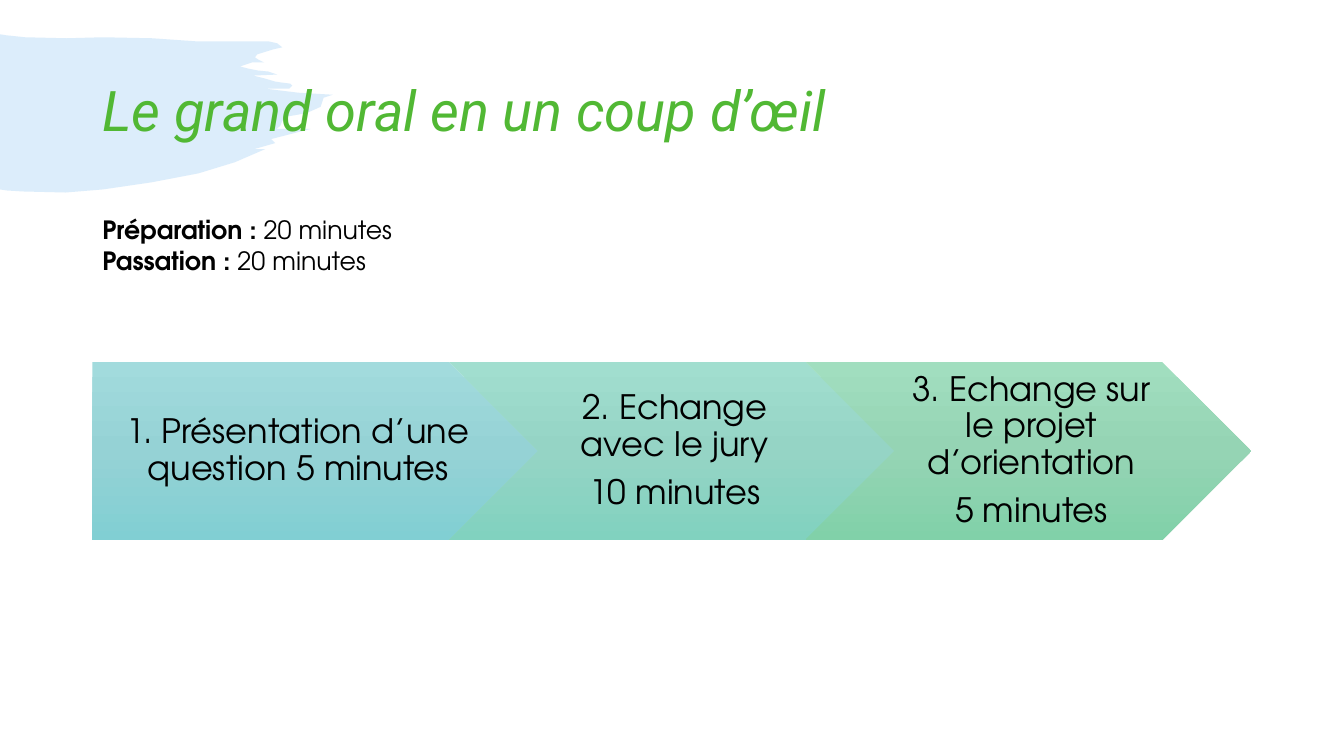
from copy import deepcopy
from dataclasses import dataclass

from lxml.etree import SubElement
from pptx import Presentation
from pptx.dml.color import RGBColor as Color
from pptx.enum.shapes import MSO_SHAPE as Preset
from pptx.enum.text import MSO_ANCHOR as Anchor, MSO_AUTO_SIZE as AutoSize, PP_ALIGN as Align
from pptx.oxml.ns import qn
from pptx.util import Inches, Pt

SLIDE_WIDTH, SLIDE_HEIGHT = Inches(13.33), Inches(7.5)
MARGIN = 6.88


@dataclass(frozen=True)
class Theme:
    title_font: str = "Roboto"
    text_font: str = "TeX Gyre Adventor"
    title_size: int = 40
    step_size: int = 24
    timing_size: int = 18
    title_color: str = "51B834"
    text_color: str = "000000"
    brush_color: str = "54A8EC"
    brush_opacity: int = 20
    line_spacing: float = 0.9
    paragraph_gap: float = 0.35


THEME = Theme()

BRUSH_OUTLINE = [
    (0, 34), (6, 35), (25, 37), (66, 38), (102, 37), (151, 38), (194, 41),
    (248, 41), (266, 41), (275, 43), (280, 47), (271, 49), (255, 54), (253, 57),
    (256, 59), (262, 62), (250, 62), (238, 66), (246, 68), (256, 70), (266, 71),
    (275, 74), (251, 75), (263, 78), (273, 81), (280, 82), (288, 83), (290, 85),
    (287, 88), (284, 88), (263, 88), (296, 92), (330, 94), (321, 97), (318, 106),
    (307, 111), (300, 113), (283, 116), (280, 120), (278, 125), (274, 128),
    (308, 128), (269, 138), (273, 142), (252, 148), (263, 148), (233, 161),
    (197, 172), (150, 181), (102, 188), (65, 191), (23, 190), (7, 189), (0, 188),
]

STEPS = [
    (Preset.PENTAGON, 0.14, ("A2DBDD", "95D2D5", "81CFD3"),
     ["1. Présentation d’une question 5 minutes"]),
    (Preset.CHEVRON, 0.1, ("A1DECF", "95D4C5", "81D2BF"),
     ["2. Echange avec le jury", "10 minutes"]),
    (Preset.CHEVRON, 0.1, ("A1DEBF", "95D4B4", "81D1A9"),
     ["3. Echange sur le projet d’orientation", "5 minutes"]),
]

TIMINGS = [("Préparation : ", "20 minutes"), ("Passation : ", "20 minutes")]


def area(left, top, width, height):
    return (int(SLIDE_WIDTH * left / 100), int(SLIDE_HEIGHT * top / 100),
            int(SLIDE_WIDTH * width / 100), int(SLIDE_HEIGHT * height / 100))


def add_run(para, text, font, size, color, bold=False, italic=False):
    span = para.add_run()
    span.text = text
    span.font.name = font
    span.font.size = Pt(size)
    span.font.color.rgb = Color.from_string(color)
    span.font.bold = bold
    span.font.italic = italic


def paragraphs(frame, count):
    return [frame.paragraphs[0]] + [frame.add_paragraph() for _ in range(count - 1)]


def add_brush(page):
    builder = page.shapes.build_freeform(*BRUSH_OUTLINE[0], scale=Inches(0.01))
    builder.add_line_segments(BRUSH_OUTLINE[1:], close=True)
    brush = builder.convert_to_shape()
    brush.shadow.inherit = False
    brush.line.fill.background()
    brush.fill.solid()
    brush.fill.fore_color.rgb = Color.from_string(THEME.brush_color)
    color = next(brush.element.iter(qn("a:srgbClr")))
    SubElement(color, qn("a:alpha")).set("val", str(THEME.brush_opacity * 1000))
    page.shapes.element.insert(2, brush.element)


def add_title(page, text):
    title = page.shapes.title
    title.left, title.top, title.width, title.height = area(MARGIN, 5.33, 86.25, 19.33)
    frame = title.text_frame
    frame.vertical_anchor = Anchor.MIDDLE
    frame.auto_size = AutoSize.NONE
    para = frame.paragraphs[0]
    para.alignment = Align.LEFT
    para.line_spacing = THEME.line_spacing
    add_run(para, text, THEME.title_font, THEME.title_size, THEME.title_color, italic=True)


def add_timings(page):
    box = page.shapes.add_textbox(*area(MARGIN, 27.73, 29.48, 9.47))
    frame = box.text_frame
    frame.word_wrap = True
    frame.auto_size = AutoSize.SHAPE_TO_FIT_TEXT
    for para, (label, duration) in zip(paragraphs(frame, len(TIMINGS)), TIMINGS):
        for text, bold in ((label, True), (duration, False)):
            add_run(para, text, THEME.text_font, THEME.timing_size, THEME.text_color, bold)


def fill_gradient(shape, colors):
    shape.fill.gradient()
    shape.fill.gradient_angle = 270
    first = next(shape.element.iter(qn("a:gs")))
    first.addnext(deepcopy(first))
    for index, (stop, color) in enumerate(zip(shape.fill.gradient_stops, colors)):
        stop.position = index / (len(colors) - 1)
        stop.color.rgb = Color.from_string(color)


def add_step(page, index, preset, inset, colors, lines):
    width = 33.16
    arrow = page.shapes.add_shape(
        preset, *area(MARGIN + index * width * 0.8, 47.87, width, 23.6))
    arrow.shadow.inherit = False
    arrow.line.fill.background()
    fill_gradient(arrow, colors)
    frame = arrow.text_frame
    frame.word_wrap = True
    frame.vertical_anchor = Anchor.MIDDLE
    frame.margin_left, frame.margin_right = Inches(inset), Inches(0.04)
    frame.margin_top = frame.margin_bottom = Inches(0.07)
    for para, text in zip(paragraphs(frame, len(lines)), lines):
        para.alignment = Align.CENTER
        para.line_spacing = THEME.line_spacing
        para.space_after = Pt(THEME.step_size * THEME.paragraph_gap)
        add_run(para, text, THEME.text_font, THEME.step_size, THEME.text_color)


def main():
    deck = Presentation()
    deck.slide_width, deck.slide_height = SLIDE_WIDTH, SLIDE_HEIGHT
    page = deck.slides.add_slide(deck.slide_layouts.get_by_name("Title Only"))
    add_brush(page)
    add_title(page, "Le grand oral en un coup d’œil")
    for index, step in enumerate(STEPS):
        add_step(page, index, *step)
    add_timings(page)
    deck.save("out.pptx")


if __name__ == "__main__":
    main()
